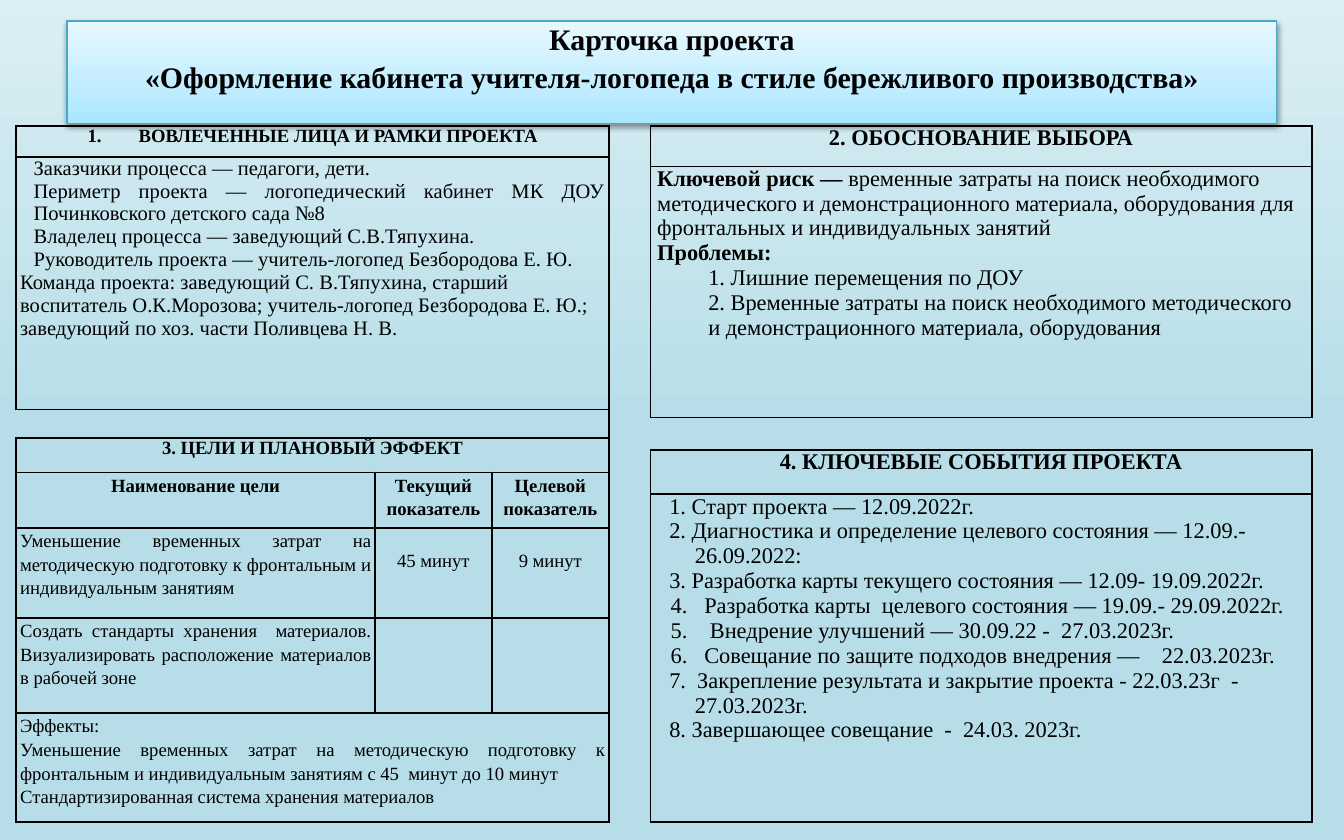
from dataclasses import dataclass, field
from lxml import etree
from pptx import Presentation, util as u
from pptx.dml.color import RGBColor
from pptx.enum import shapes, text
from pptx.oxml.ns import qn

W, H = 10, 6.25
MID, JUST, LEFT = (text.PP_ALIGN.CENTER, text.PP_ALIGN.JUSTIFY,
                   text.PP_ALIGN.LEFT)


@dataclass(frozen=True)
class Theme:
    font: str = "Times New Roman"
    ink: str = "000000"
    edge: str = "46AAC5"
    back: tuple = ((0, "DBEEF4"), (50, "B7DEE8"), (100, "B7DEE8"))
    band: tuple = ((0, "A7E6FF"), (35, "C1EDFF"), (100, "E7F8FF"))
    title: float = 16
    large: float = 12
    body: float = 11
    small: float = 10
    tiny: float = 6
    rule: float = 1


T = Theme()


@dataclass
class Par:
    txt: str
    lead: str = ""        # bold words before the text
    bold: bool = False
    align: int = LEFT
    left: float = 0
    hang: float = 0
    gap: float = 0        # space before and after
    line: float = 1
    start: int = 0        # first number of an automatic list


@dataclass
class Cell:
    pars: list = field(default_factory=list)
    size: float = T.small
    top: float = 0


@dataclass
class Row:
    high: float
    cells: list
    sides: str = "LRTB"


@dataclass
class Grid:
    x: float              # shares of the slide
    y: float
    cols: list
    pad: float
    rows: list


def add(par, tag: str, **attrs):
    return etree.SubElement(par, qn(tag), {k: str(v) for k, v in attrs.items()})


def grade(root, stops: tuple, angle: int) -> None:
    """Set the stops and the clockwise angle of the gradient under root."""
    grad = root.find(".//" + qn("a:gradFill"))
    for kid in list(grad):
        grad.remove(kid)
    group = add(grad, "a:gsLst")
    for pos, color in stops:
        add(add(group, "a:gs", pos=pos * 1000), "a:srgbClr", val=color)
    add(grad, "a:lin", ang=angle * 60000, scaled=0)


def write(para, txt: str, *, size: float, bold: bool = False) -> None:
    run = para.add_run()
    run.text = txt
    run.font.name, run.font.size, run.font.bold = T.font, u.Pt(size), bold
    run.font.color.rgb = RGBColor.from_string(T.ink)


def fill(frame, pars: list, size: float) -> None:
    """Write the paragraphs into a text frame."""
    for i, par in enumerate(pars):
        para = frame.add_paragraph() if i else frame.paragraphs[0]
        para.alignment, para.line_spacing = par.align, par.line
        para.space_before = para.space_after = u.Pt(par.gap)
        props = para._p.get_or_add_pPr()
        props.set("marL", str(u.Inches(par.left)))
        props.set("indent", str(u.Inches(-par.hang)))
        if par.start:
            add(props, "a:buFont", typeface="+mj-lt")
            add(props, "a:buAutoNum", type="arabicPeriod", startAt=par.start)
        if par.lead:
            write(para, par.lead, size=size, bold=True)
        if par.txt:
            write(para, par.txt, size=size, bold=par.bold)
    if not pars:
        add(frame.paragraphs[0]._p, "a:endParaRPr", sz=int(T.tiny * 100))


def border(cell, sides: str) -> None:
    props = cell._tc.get_or_add_tcPr()
    for side in "LRTB":
        line = add(props, "a:ln" + side, w=u.Pt(T.rule))
        if side in sides:
            add(add(line, "a:solidFill"), "a:srgbClr", val=T.ink)
        else:
            add(line, "a:noFill")


def draw(slide, grid: Grid) -> None:
    wide, high = sum(grid.cols), sum(r.high for r in grid.rows)
    table = slide.shapes.add_table(
        len(grid.rows), len(grid.cols), u.Inches(grid.x * W),
        u.Inches(grid.y * H), u.Inches(wide), u.Inches(high)).table
    table.first_row = table.horz_banding = False
    for col, size in zip(table.columns, grid.cols):
        col.width = u.Inches(size)
    for r, row in enumerate(grid.rows):
        table.rows[r].height = u.Inches(row.high)
        for c in range(len(grid.cols)):
            cell = table.cell(r, c)
            item = row.cells[c] if c < len(row.cells) else Cell()
            border(cell, row.sides)
            cell.fill.background()
            cell.margin_left = cell.margin_right = u.Inches(grid.pad)
            cell.margin_top, cell.margin_bottom = u.Inches(item.top), 0
            fill(cell.text_frame, item.pars, item.size)
        if len(row.cells) < len(grid.cols):
            table.cell(r, 0).merge(table.cell(r, len(grid.cols) - 1))


def head(txt: str, size: float, start: int = 0) -> list:
    return [Cell([Par(txt, bold=True, align=MID, left=0.38, hang=0.38,
                      gap=6, start=start)], size)]


def wide(txt: str, bold: bool = False, align=JUST, top: float = 0) -> Cell:
    return Cell([Par(t, bold=bold, align=align, line=1.15)
                 for t in txt.split("\n")], top=top)


def step(txt: str) -> Par:
    return Par(txt, left=0.28, hang=0.19)


def auto(txt: str) -> Par:
    return Par(txt, left=0.35, hang=0.25, start=4)


# People, scope and goals
people = [Par(t, align=JUST, left=0.1) for t in (
    "Заказчики процесса — педагоги, дети.",
    "Периметр проекта — логопедический кабинет МК ДОУ Починковского детского сада №8",
    "Владелец процесса — заведующий С.В.Тяпухина.",
    "Руководитель проекта — учитель-логопед Безбородова Е. Ю.")]
team = Par("Команда проекта: заведующий С. В.Тяпухина, старший воспитатель О.К.Морозова; "
           "учитель-логопед Безбородова Е. Ю.; заведующий по хоз. части Поливцева Н. В.")
goals = Grid(0.012, 0.15, [2.67, 0.87, 0.87], 0.03, [
    Row(0.23, head("ВОВЛЕЧЕННЫЕ ЛИЦА И РАМКИ ПРОЕКТА", T.small, 1)),
    Row(1.88, [Cell(people + [team], T.body)]),
    Row(0.21, [Cell()], "RTB"),
    Row(0.26, head("3. ЦЕЛИ И ПЛАНОВЫЙ ЭФФЕКТ", T.small)),
    Row(0.41, [wide(t, True, MID) for t in (
        "Наименование цели", "Текущий показатель", "Целевой показатель")]),
    Row(0.67, [wide("Уменьшение временных затрат на методическую подготовку "
                    "к фронтальным и индивидуальным занятиям"),
               wide("45 минут", align=MID, top=0.15),
               wide("9 минут", align=MID, top=0.15)]),
    Row(0.71, [wide("Создать стандарты хранения  материалов. Визуализировать "
                    "расположение материалов в рабочей зоне"), Cell(), Cell()]),
    Row(0.81, [wide("Эффекты:\nУменьшение временных затрат на методическую подготовку к "
                    "фронтальным и индивидуальным занятиям с 45  минут до 10 минут\n"
                    "Стандартизированная система хранения материалов")]),
])

# Reasons and key events
reasons = [
    Par("временные затраты на поиск необходимого методического и демонстрационного "
        "материала, оборудования для фронтальных и индивидуальных занятий",
        lead="Ключевой риск — "),
    Par("", lead="Проблемы:"),
    Par("1. Лишние перемещения по ДОУ", left=0.38),
    Par("2. Временные затраты на поиск необходимого методического и "
        "демонстрационного материала, оборудования", left=0.38)]
dates = [
    step("1. Старт проекта — 12.09.2022г."),
    step("2. Диагностика и определение целевого состояния — 12.09.- 26.09.2022:"),
    step("3. Разработка карты текущего состояния — 12.09- 19.09.2022г."),
    auto("Разработка карты  целевого состояния — 19.09.- 29.09.2022г."),
    auto(" Внедрение улучшений — 30.09.22 -  27.03.2023г."),
    auto("Совещание по защите подходов внедрения —    22.03.2023г."),
    step("7.  Закрепление результата и закрытие проекта - 22.03.23г  - 27.03.2023г."),
    step("8. Завершающее совещание  -  24.03. 2023г.")]
events = Grid(0.484, 0.15, [4.92], 0.05, [
    Row(0.3, head("2. ОБОСНОВАНИЕ ВЫБОРА", T.large)),
    Row(1.87, [Cell(reasons, T.large)]),
    Row(0.24, [Cell()], "TB"),
    Row(0.33, head("4. КЛЮЧЕВЫЕ СОБЫТИЯ ПРОЕКТА", T.large)),
    Row(2.44, [Cell(dates, T.large)]),
])


def banner(slide) -> None:
    box = slide.shapes.add_shape(
        shapes.MSO_SHAPE.RECTANGLE, u.Inches(0.05 * W), u.Inches(0.025 * H),
        u.Inches(0.9 * W), u.Inches(0.122 * H))
    box.fill.gradient()
    grade(box.element, T.band, 270)
    box.line.color.rgb = RGBColor.from_string(T.edge)
    box.line.width = u.Pt(0.75)
    box.shadow.inherit = False
    glow = add(box.element.find(".//" + qn("a:effectLst")), "a:outerShdw",
               blurRad=u.Pt(3.1), dist=u.Pt(1.6), dir=90 * 60000, rotWithShape=0)
    add(add(glow, "a:srgbClr", val=T.ink), "a:alpha", val=38000)
    frame = box.text_frame
    frame.word_wrap = True
    frame.vertical_anchor = text.MSO_ANCHOR.TOP
    frame.margin_top = frame.margin_bottom = 0
    fill(frame, [Par(t, bold=True, align=MID, gap=0.5) for t in (
        "Карточка проекта",
        "«Оформление кабинета учителя-логопеда в стиле бережливого производства»",
    )], T.title)


def main() -> None:
    deck = Presentation()
    deck.slide_width, deck.slide_height = u.Inches(W), u.Inches(H)
    slide = deck.slides.add_slide(deck.slide_layouts[6])
    slide.background.fill.gradient()
    grade(slide.element, T.back, 90)
    banner(slide)
    for grid in (goals, events):
        draw(slide, grid)
    deck.save("out.pptx")


if __name__ == "__main__":
    main()
